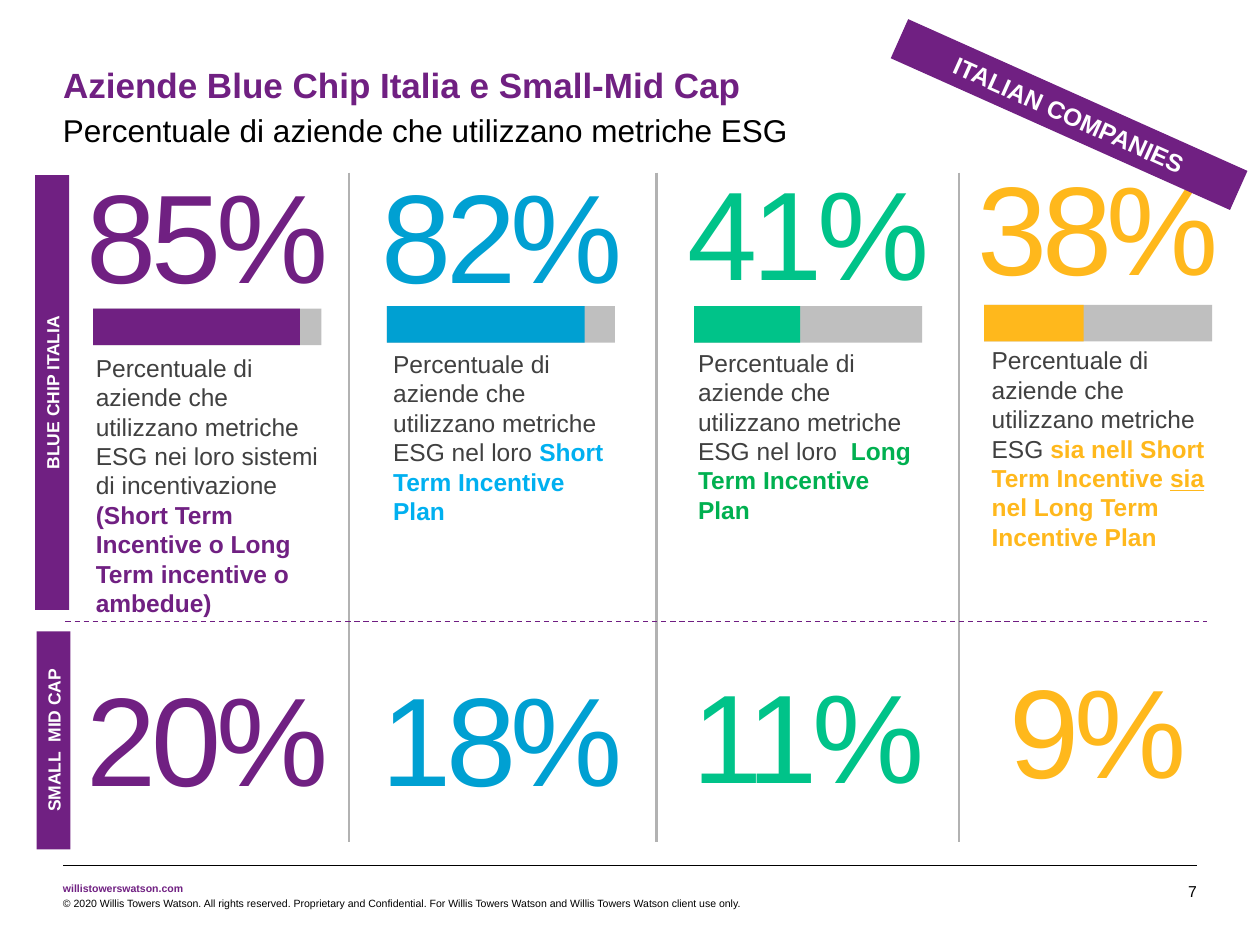
from dataclasses import dataclass

import pptx
import pptx.dml.color
import pptx.enum.dml
import pptx.enum.shapes
import pptx.enum.text
import pptx.oxml.ns
import pptx.util
from lxml import etree

Inches = pptx.util.Inches
Pt = pptx.util.Pt
RGBColor = pptx.dml.color.RGBColor
Align = pptx.enum.text.PP_ALIGN
Anchor = pptx.enum.text.MSO_ANCHOR

PURPLE = RGBColor(0x70, 0x20, 0x82)
PLUM = RGBColor(0x6F, 0x1D, 0x82)
BLUE = RGBColor(0x00, 0xA0, 0xD2)
SKY = RGBColor(0x00, 0xB0, 0xF0)
GREEN = RGBColor(0x00, 0xC3, 0x89)
LEAF = RGBColor(0x00, 0xB0, 0x50)
GOLD = RGBColor(0xFF, 0xB8, 0x1C)
GREY = RGBColor(0xBF, 0xBF, 0xBF)
RULE = RGBColor(0xB2, 0xB2, 0xB2)
DARK = RGBColor(0x40, 0x40, 0x40)
BLACK = RGBColor(0, 0, 0)
WHITE = RGBColor(0xFF, 0xFF, 0xFF)

Box = tuple[float, float, float, float]
INTRO = "Percentuale di aziende che utilizzano metriche ESG "
BAR_WIDTH = 1.81
SMALL_DROP = 3.99  # from the upper row of figures to the lower one


@dataclass
class Run:
    text: str
    size: float
    color: RGBColor
    bold: bool = False
    under: bool = False
    track: float = 0


@dataclass
class Column:
    left: float
    top: float
    bar: tuple[float, float]
    fill: float
    note: tuple[float, float]
    color: RGBColor
    large: str
    small: str
    runs: list[Run]


@dataclass
class Label:
    text: str
    box: Box
    turn: float
    size: float


@dataclass
class Line:
    start: tuple[float, float]
    end: tuple[float, float]
    color: RGBColor
    width: float
    dashed: bool = False


def bold(text: str, color: RGBColor, under: bool = False) -> Run:
    return Run(text, 14, color, True, under)


COLUMNS = [
    Column(0.55, 0.92, (0.74, 2.45), 1.64, (0.72, 2.76), PURPLE, "85%", "20%", [
        Run(INTRO + "nei loro sistemi di incentivazione ", 14, DARK),
        bold("(Short Term Incentive o Long Term incentive o ambedue)", PURPLE)]),
    Column(2.89, 0.92, (3.07, 2.43), 1.57, (3.08, 2.73), BLUE, "82%", "18%", [
        Run(INTRO + "nel loro ", 14, DARK),
        bold("Short Term Incentive Plan", SKY)]),
    Column(5.32, 0.9, (5.51, 2.43), 0.84, (5.5, 2.72), GREEN, "41%", "11%", [
        Run(INTRO + "nel loro  ", 14, DARK),
        bold("Long Term Incentive Plan", LEAF)]),
    Column(7.62, 0.86, (7.81, 2.42), 0.79, (7.83, 2.7), GOLD, "38%", "9%", [
        Run(INTRO, 14, DARK),
        bold("sia nell Short Term Incentive ", GOLD),
        bold("sia", GOLD, True),
        bold(" nel Long Term Incentive Plan", GOLD)]),
]

LABELS = [
    Label("BLUE CHIP ITALIA", (-1.31, 2.98, 3.45, 0.27), 270, 10),
    Label("SMALL  MID CAP", (-0.44, 5.74, 1.73, 0.27), 270, 10),
    Label("ITALIAN COMPANIES", (7.01, 0.74, 2.95, 0.34), 24.1, 14),
]

LINES = [Line((x, 1.37), (x, 6.68), RULE, 1.5) for x in (2.77, 5.21, 7.61)] + [
    Line((0.52, 4.93), (9.58, 4.93), PLUM, 0.75, True),
    Line((0.5, 6.87), (9.5, 6.87), BLACK, 0.25),
]


def write(shape, runs: list[Run], align=Align.LEFT, anchor=Anchor.TOP,
          pad: Box = (0, 0, 0, 0), after: float = 0, wrap: bool = True) -> None:
    frame = shape.text_frame
    left, top, right, base = map(Inches, pad)
    style = {"margin_left": left, "margin_top": top, "margin_right": right,
             "margin_bottom": base, "vertical_anchor": anchor, "word_wrap": wrap,
             "auto_size": pptx.enum.text.MSO_AUTO_SIZE.NONE}
    for name, value in style.items():
        setattr(frame, name, value)
    para = frame.paragraphs[0]
    para.alignment = align
    para.space_after = Pt(after)
    for item in runs:
        run = para.add_run()
        run.text = item.text
        look = {"name": "Arial", "size": Pt(item.size), "bold": item.bold,
                "underline": item.under}
        for name, value in look.items():
            setattr(run.font, name, value)
        run.font.color.rgb = item.color
        if item.track:
            run.font._element.set("spc", str(round(item.track * 100)))


def add_text(slide, box: Box, runs: list[Run], **style) -> None:
    write(slide.shapes.add_textbox(*map(Inches, box)), runs, **style)


def add_rect(slide, box: Box, color: RGBColor):
    kind = pptx.enum.shapes.MSO_SHAPE.RECTANGLE
    rect = slide.shapes.add_shape(kind, *map(Inches, box))
    rect.shadow.inherit = False
    rect.fill.solid()
    rect.fill.fore_color.rgb = color
    rect.line.fill.background()
    return rect


def add_line(slide, line: Line) -> None:
    kind = pptx.enum.shapes.MSO_CONNECTOR.STRAIGHT
    rule = slide.shapes.add_connector(kind, *map(Inches, line.start + line.end))
    rule.line.color.rgb = line.color
    rule.line.width = Pt(line.width)
    if line.dashed:
        rule.line.dash_style = pptx.enum.dml.MSO_LINE.DASH
    etree.SubElement(rule._element.spPr, pptx.oxml.ns.qn("a:effectLst"))


def add_column(slide, col: Column) -> None:
    for text, top in ((col.large, col.top), (col.small, col.top + SMALL_DROP)):
        add_text(slide, (col.left, top, 2.19, 1.86),
                 [Run(text, 72, col.color, track=-3)],
                 align=Align.CENTER, anchor=Anchor.MIDDLE, after=8)
    for width, color in ((BAR_WIDTH, GREY), (col.fill, col.color)):
        add_rect(slide, (*col.bar, width, 0.29), color)
    add_text(slide, (*col.note, 1.85, 2.31), col.runs,
             pad=(0.04, 0.04, 0.04, 0.08), after=6)


def add_label(slide, label: Label) -> None:
    rect = add_rect(slide, label.box, PURPLE)
    rect.rotation = label.turn
    write(rect, [Run(label.text, label.size, WHITE, True)],
          align=Align.CENTER, anchor=Anchor.MIDDLE)


def add_title(slide) -> None:
    title = slide.shapes.title
    place = {"left": 0.5, "top": 0.5, "width": 9, "height": 0.34}
    for name, value in place.items():
        setattr(title, name, Inches(value))
    write(title, [Run("Aziende Blue Chip Italia e Small-Mid Cap", 20, PURPLE, True)])
    add_text(slide, (0.5, 0.88, 9, 0.3),
             [Run("Percentuale di aziende che utilizzano metriche ESG", 18, BLACK)])


def add_footer(slide) -> None:
    add_text(slide, (0.5, 7, 0.96, 0.1),
             [Run("willistowerswatson.com", 6, PURPLE, True)], wrap=False)
    add_text(slide, (0.5, 7.12, 5.77, 0.1), [Run(
        "© 2020 Willis Towers Watson. All rights reserved. Proprietary and Confidential. "
        "For Willis Towers Watson and Willis Towers Watson client use only.", 6, BLACK)])
    add_text(slide, (9.08, 7, 0.42, 0.15), [Run("7", 9, BLACK)],
             align=Align.RIGHT, anchor=Anchor.BOTTOM)


def main() -> None:
    deck = pptx.Presentation()
    deck.slide_width, deck.slide_height = Inches(10), Inches(7.5)
    slide = deck.slides.add_slide(deck.slide_layouts[5])
    add_title(slide)
    for line in LINES:
        add_line(slide, line)
    for col in COLUMNS:
        add_column(slide, col)
    for label in LABELS:
        add_label(slide, label)
    add_footer(slide)
    deck.save("out.pptx")


if __name__ == "__main__":
    main()
